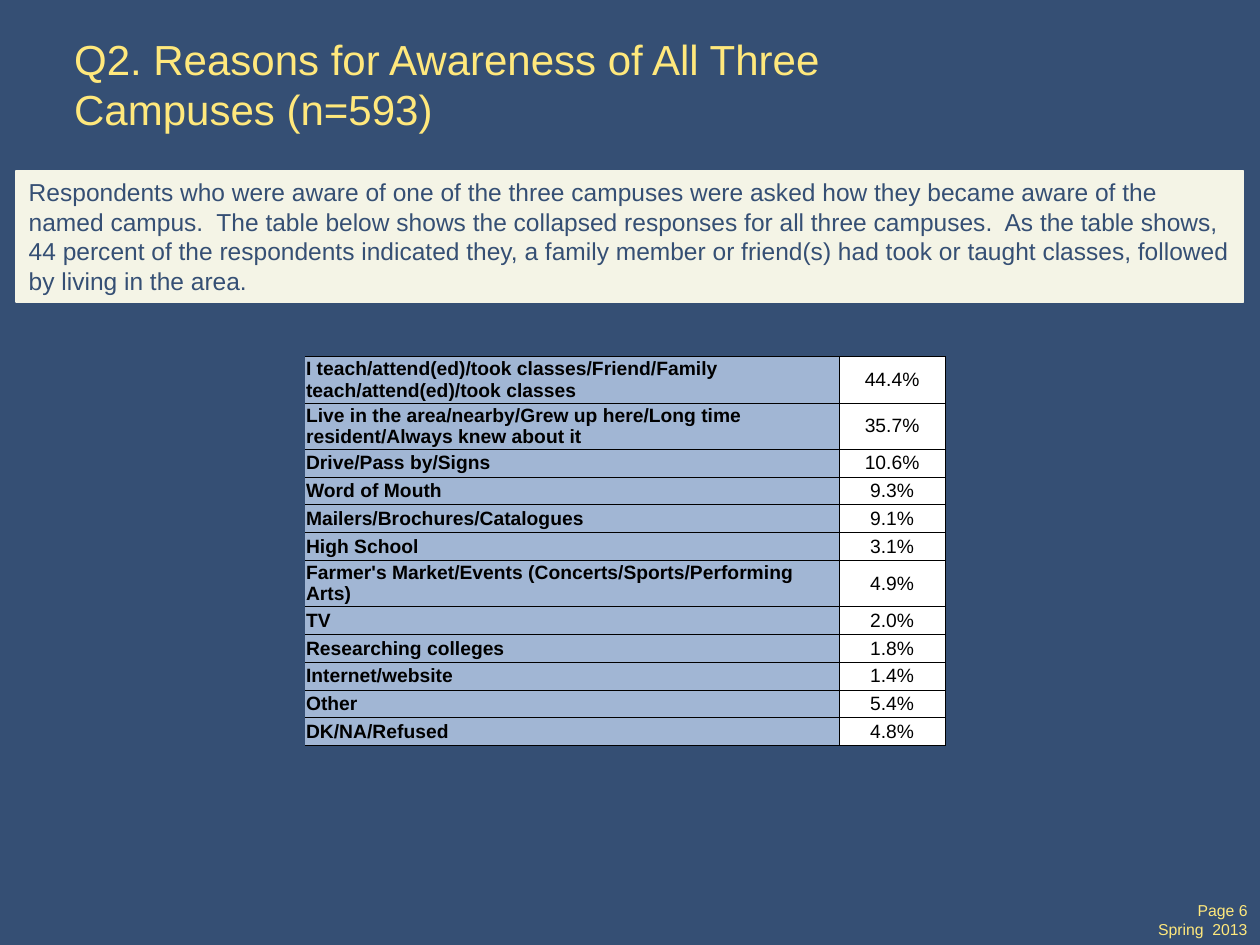
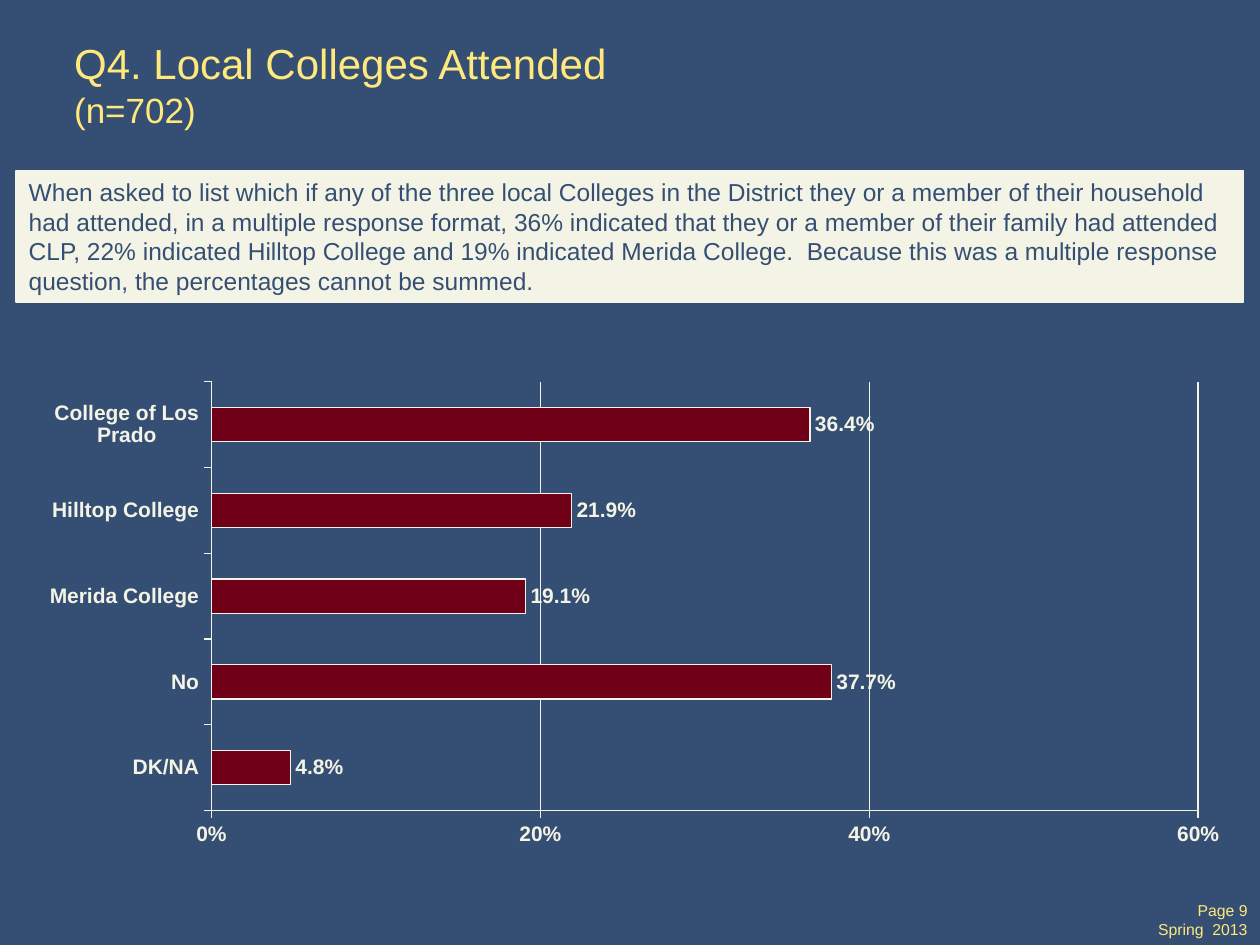
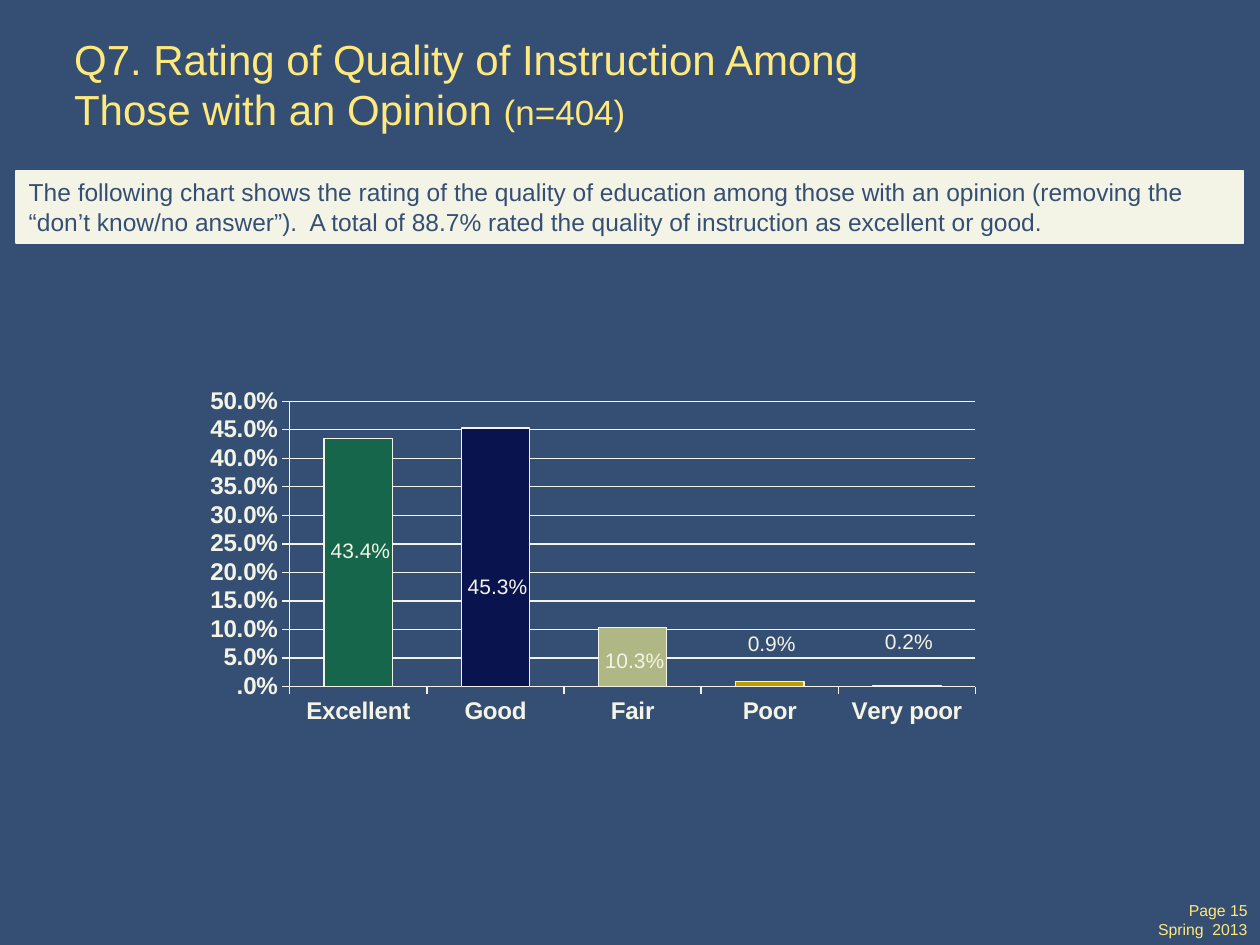
from lxml import etree
from pptx import Presentation
from pptx import util as u
from pptx.chart.data import CategoryChartData
from pptx.dml.color import RGBColor
from pptx.enum import chart as charts, shapes, text
from pptx.oxml import ns

FONT = "Arial"
NAVY, YELLOW, CREAM = "354F74", "FFE87C", "F4F4E6"
MAROON, BLACK, WHITE, LIGHT_BLUE = "700017", "000000", "FFFFFF", "A1B6D4"

SEASON = "Spring  2013"

AWARENESS = {
    "page": "Page 6",
    "title": "Q2. Reasons for Awareness of All Three Campuses (n=593)",
    "sample": "",
    "comment": "Respondents who were aware of one of the three campuses were asked how they became "
               "aware of the named campus.  The table below shows the collapsed responses for all "
               "three campuses.  As the table shows, 44 percent of the respondents indicated they, "
               "a family member or friend(s) had took or taught classes, followed by living in the "
               "area.",
    "comment_height": 2.64,
}
REASONS = [
    ("I teach/attend(ed)/took classes/Friend/Family teach/attend(ed)/took classes", "44.4%"),
    ("Live in the area/nearby/Grew up here/Long time resident/Always knew about it", "35.7%"),
    ("Drive/Pass by/Signs", "10.6%"),
    ("Word of Mouth", "9.3%"),
    ("Mailers/Brochures/Catalogues", "9.1%"),
    ("High School", "3.1%"),
    ("Farmer's Market/Events (Concerts/Sports/Performing Arts)", "4.9%"),
    ("TV", "2.0%"),
    ("Researching colleges", "1.8%"),
    ("Internet/website", "1.4%"),
    ("Other", "5.4%"),
    ("DK/NA/Refused", "4.8%"),
]

ATTENDANCE = {
    "page": "Page 9",
    "title": "Q4. Local Colleges Attended\v",
    "sample": "(n=702)",
    "comment": "When asked to list which if any of the three local Colleges in the District they or "
               "a member of their household had attended, in a multiple response format, 36% "
               "indicated that they or a member of their family had attended CLP, 22% indicated "
               "Hilltop College and 19% indicated Merida College.  Because this was a multiple "
               "response question, the percentages cannot be summed.",
    "comment_height": 2.64,
}
COLLEGES = [
    ("DK/NA", 0.048),
    ("No", 0.377),
    ("Merida College", 0.191),
    ("Hilltop College", 0.219),
    ("College of Los Prado", 0.364),
]

QUALITY = {
    "page": "Page 15",
    "title": "Q7. Rating of Quality of Instruction Among Those with an Opinion ",
    "sample": "(n=404)",
    "comment": "The following chart shows the rating of the quality of education among those with "
               "an opinion (removing the “don’t know/no answer”).  A total of 88.7% rated the "
               "quality of instruction as excellent or good.",
    "comment_height": 1.45,
}
RATINGS = [
    ("Excellent", 0.434),
    ("Good", 0.453),
    ("Fair", 0.103),
    ("Poor", 0.009),
    ("Very poor", 0.002),
]
RATING_COLOURS = ["15664A", "09144F", "AFB884", "BE9C00", MAROON]
RATING_LABEL_SHIFTS = [-1.5, 4.1, 0.5, -5.4, -6]


def rgb(colour):
    return RGBColor.from_string(colour)


def box(left, top, width, height):
    return [u.Cm(length) for length in (left, top, width, height)]


def style(font, size, colour, bold=False):
    font.name = FONT
    font.size = u.Pt(size)
    font.bold = bold
    font.color.rgb = rgb(colour)


def style_runs(frame, size, colour, align=text.PP_ALIGN.LEFT, bold=False):
    for paragraph in frame.paragraphs:
        paragraph.alignment = align
        for run in paragraph.runs:
            style(run.font, size, colour, bold)


def set_line(line, colour, width):
    line.color.rgb = rgb(colour)
    line.width = u.Pt(width)


def prepare_layout(deck):
    master = deck.slide_master
    master.background.fill.solid()
    master.background.fill.fore_color.rgb = rgb(NAVY)
    level = master.element.find(".//" + ns.qn("p:titleStyle") + "/" + ns.qn("a:lvl1pPr"))
    level.set("algn", "l")
    level.find(ns.qn("a:defRPr")).set("sz", "2400")
    layout = deck.slide_layouts[5]
    heading = layout.placeholders[0]
    heading.left, heading.top, heading.width, heading.height = box(1.24, 0.84, 18.42, 1.7)
    heading.text_frame.vertical_anchor = text.MSO_ANCHOR.MIDDLE
    heading.text_frame.auto_size = text.MSO_AUTO_SIZE.NONE
    return layout


def add_question(deck, layout, question):
    slide = deck.slides.add_slide(layout)

    heading = slide.shapes.title.text_frame
    heading.text = question["title"]
    style_runs(heading, 24, YELLOW)
    if question["sample"]:
        sample = heading.paragraphs[0].add_run()
        sample.text = question["sample"]
        style(sample.font, 20, YELLOW)

    comment = slide.shapes.add_shape(shapes.MSO_SHAPE.RECTANGLE,
                                     *box(0.33, 3.45, 24.74, question["comment_height"]))
    comment.shadow.inherit = False
    comment.fill.solid()
    comment.fill.fore_color.rgb = rgb(CREAM)
    set_line(comment.line, CREAM, 1)
    comment.text_frame.vertical_anchor = text.MSO_ANCHOR.TOP
    comment.text_frame.text = question["comment"]
    style_runs(comment.text_frame, 14, NAVY)

    footer = slide.shapes.add_textbox(*box(23.06, 18.03, 2.34, 1.02)).text_frame
    footer.word_wrap = False
    footer.text = question["page"] + "\n" + SEASON
    style_runs(footer, 9, YELLOW, text.PP_ALIGN.RIGHT)
    return slide


def set_borders(cell, widths):
    properties = cell._tc.get_or_add_tcPr()
    for side, width in zip("LRTB", widths):
        border = etree.SubElement(properties, ns.qn("a:ln" + side), w=str(u.Pt(width)))
        if width:
            fill = etree.SubElement(border, ns.qn("a:solidFill"))
            etree.SubElement(fill, ns.qn("a:srgbClr"), val=BLACK)
        else:
            etree.SubElement(border, ns.qn("a:noFill"))


def add_reasons(slide):
    row_height = 0.56
    columns = [
        (10.77, LIGHT_BLUE, text.PP_ALIGN.LEFT, True, (0, 1)),
        (2.13, WHITE, text.PP_ALIGN.CENTER, False, (1, 0.5)),
    ]
    last = len(REASONS) - 1
    table = slide.shapes.add_table(len(REASONS), len(columns),
                                   *box(6.15, 7.19, 12.9, row_height * len(REASONS))).table
    table.first_row = table.horz_banding = False
    for row in table.rows:
        row.height = u.Cm(row_height)
    for c, (width, colour, align, bold, sides) in enumerate(columns):
        table.columns[c].width = u.Cm(width)
        for r, reason in enumerate(REASONS):
            cell = table.cell(r, c)
            set_borders(cell, (*sides, 0.5, 1 if r == last else 0.5))
            cell.fill.solid()
            cell.fill.fore_color.rgb = rgb(colour)
            cell.vertical_anchor = text.MSO_ANCHOR.MIDDLE
            cell.margin_left = cell.margin_right = u.Cm(0.02)
            cell.margin_top = cell.margin_bottom = 0
            cell.text = reason[c]
            style_runs(cell.text_frame, 11, BLACK, align, bold)


def make_layout(**percents):
    layout = etree.Element(ns.qn("c:layout"))
    manual = etree.SubElement(layout, ns.qn("c:manualLayout"))
    for tag, value in percents.items():
        setting = value if isinstance(value, str) else f"{value / 100:.3f}"
        etree.SubElement(manual, ns.qn("c:" + tag), val=setting)
    return layout


def add_bars(slide, kind, area, plot_area, answers, font_size, top, step, axis_format, gap):
    data = CategoryChartData(number_format="0.0%")
    data.categories = [answer for answer, share in answers]
    data.add_series("Series 1", [share for answer, share in answers])
    chart = slide.shapes.add_chart(kind, *box(*area), data).chart
    chart.has_legend = chart.has_title = False
    style(chart.font, font_size, CREAM, True)

    for axis in (chart.category_axis, chart.value_axis):
        axis.major_tick_mark = charts.XL_TICK_MARK.OUTSIDE
        axis.minor_tick_mark = charts.XL_TICK_MARK.NONE
        set_line(axis.format.line, CREAM, 0.75)
        style(axis.tick_labels.font, font_size, CREAM, True)
    shares = chart.value_axis
    shares.minimum_scale, shares.maximum_scale, shares.major_unit = 0, top, step
    shares.has_major_gridlines = True
    set_line(shares.major_gridlines.format.line, CREAM, 0.75)
    shares.tick_labels.number_format = axis_format
    shares.tick_labels.number_format_is_linked = False

    plot = chart.plots[0]
    plot.gap_width = gap
    plot.vary_by_categories = False
    bars = plot.series[0]
    bars.format.fill.solid()
    bars.format.fill.fore_color.rgb = rgb(MAROON)
    set_line(bars.format.line, CREAM, 0.75)

    region = chart._chartSpace.find(".//" + ns.qn("c:plotArea"))
    for automatic in region.findall(ns.qn("c:layout")):
        region.remove(automatic)
    x, y, w, h = plot_area
    region.insert(0, make_layout(layoutTarget="inner", xMode="edge", yMode="edge",
                                 x=x, y=y, w=w, h=h))
    return chart, bars


def show_values(labels, bold, position):
    labels.show_value = True
    labels.number_format = "0.0%"
    labels.number_format_is_linked = False
    labels.position = position
    style(labels.font, 12, CREAM, bold)


def add_colleges(slide):
    chart, bars = add_bars(slide, charts.XL_CHART_TYPE.BAR_CLUSTERED, (0.33, 7.49, 24.74, 9.75),
                           (15.9, 2.1, 80.4, 88.7), COLLEGES, 12, 0.6, 0.2, "0%", 150)
    show_values(bars.data_labels, True, charts.XL_LABEL_POSITION.OUTSIDE_END)


def add_ratings(slide):
    chart, bars = add_bars(slide, charts.XL_CHART_TYPE.COLUMN_STACKED, (2.44, 4.9, 20.75, 14.83),
                           (16.4, 21.5, 66.6, 38.8), RATINGS, 13.8, 0.5, 0.05, "####.0%", 100)
    chart.plots[0].overlap = 100
    centre = charts.XL_LABEL_POSITION.CENTER
    show_values(bars.data_labels, False, centre)
    for i, colour in enumerate(RATING_COLOURS):
        point = bars.points[i]
        point.format.fill.solid()
        point.format.fill.fore_color.rgb = rgb(colour)
        set_line(point.format.line, CREAM, 0.75)
        style(point.data_label.font, 12, CREAM)
        point.data_label.position = centre
    labels = chart._chartSpace.iter(ns.qn("c:dLbl"))
    for label, shift in zip(list(labels), RATING_LABEL_SHIFTS):
        label.insert(1, make_layout(x=0.2, y=shift))
    for leader_lines in chart._chartSpace.iter(ns.qn("c:showLeaderLines")):
        leader_lines.set("val", "0")


def main():
    deck = Presentation()
    deck.slide_width, deck.slide_height = u.Cm(25.4), u.Cm(19.05)
    layout = prepare_layout(deck)
    for question, add_results in ((AWARENESS, add_reasons), (ATTENDANCE, add_colleges),
                                  (QUALITY, add_ratings)):
        add_results(add_question(deck, layout, question))
    deck.save("out.pptx")


if __name__ == "__main__":
    main()
